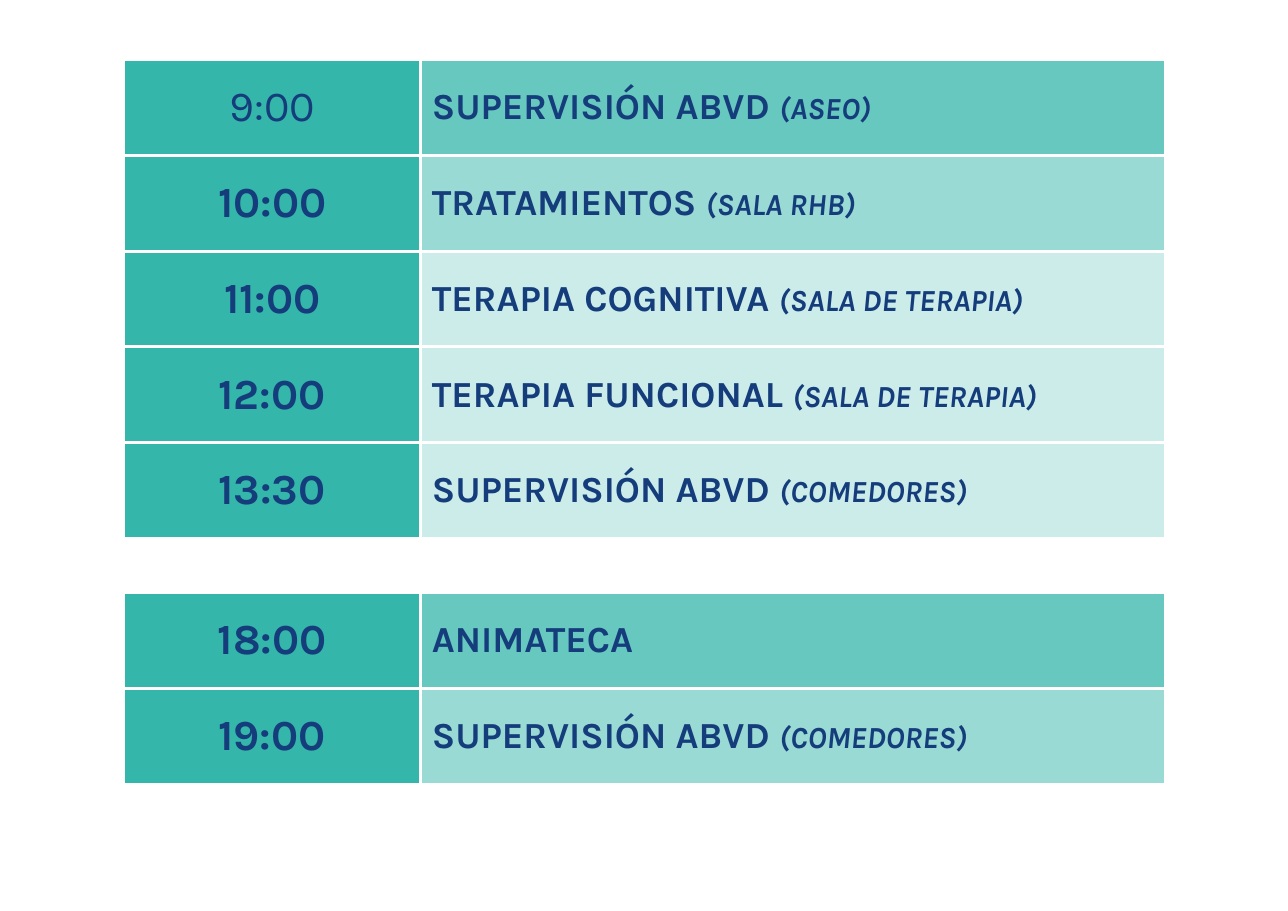
from lxml import etree
from pptx import Presentation, util as u
from pptx.dml.color import RGBColor
from pptx.enum import text
from pptx.oxml import ns

TEAL, NAVY, WHITE = "35B6AA", "153D7C", "FFFFFF"
COLUMN_WIDTHS = (2.7, 6.76)
ROW_HEIGHT, BREAK_HEIGHT = 0.87, 0.49
BORDER_WIDTH = 2.25

HOUR = {"size": u.Pt(28), "bold": True}
FIRST_HOUR = {"size": u.Pt(28), "bold": False}
ACTIVITY = {"size": u.Pt(24), "bold": True}
PLACE = {"size": u.Pt(20), "bold": True, "italic": True}

# Hour, activity, place, opacity of the activity cell; None is the midday break
SCHEDULE = [
    ("9:00", "SUPERVISIÓN ABVD ", "(ASEO)", 75),
    ("10:00", "TRATAMIENTOS ", "(SALA RHB)", 50),
    ("11:00", "TERAPIA COGNITIVA ", "(SALA DE TERAPIA)", 25),
    ("12:00", "TERAPIA FUNCIONAL ", "(SALA DE TERAPIA)", 25),
    ("13:30", "SUPERVISIÓN ABVD ", "(COMEDORES)", 25),
    None,
    ("18:00", "ANIMATECA", "", 75),
    ("19:00", "SUPERVISIÓN ABVD ", "(COMEDORES)", 50),
]


def color(hex_value):
    return RGBColor.from_string(hex_value)


def add_borders(cell):
    properties = cell._tc.get_or_add_tcPr()
    for side in ("a:lnL", "a:lnR", "a:lnT", "a:lnB"):
        border = etree.SubElement(properties, ns.qn(side), w=str(u.Pt(BORDER_WIDTH)))
        fill = etree.SubElement(border, ns.qn("a:solidFill"))
        etree.SubElement(fill, ns.qn("a:srgbClr"), val=WHITE)


def fill_cell(cell, opacity=100):
    cell.fill.solid()
    cell.fill.fore_color.rgb = color(TEAL)
    if opacity < 100:
        tint = cell._tc.tcPr.find(ns.qn("a:solidFill")).find(ns.qn("a:srgbClr"))
        etree.SubElement(tint, ns.qn("a:alpha"), val=str(opacity * 1000))


def write_cell(cell, alignment, *pieces):
    cell.vertical_anchor = text.MSO_ANCHOR.MIDDLE
    paragraph = cell.text_frame.paragraphs[0]
    paragraph.alignment = alignment
    for words, style in pieces:
        if not words:
            continue
        run = paragraph.add_run()
        run.text = words
        run.font.name = "Karla"
        run.font.color.rgb = color(NAVY)
        for attribute, value in style.items():
            setattr(run.font, attribute, value)


def add_schedule(slide, left, top):
    heights = [ROW_HEIGHT if entry else BREAK_HEIGHT for entry in SCHEDULE]
    schedule = slide.shapes.add_table(
        len(SCHEDULE), len(COLUMN_WIDTHS), u.Inches(left), u.Inches(top),
        u.Inches(sum(COLUMN_WIDTHS)), u.Inches(sum(heights))).table
    schedule.first_row = schedule.horz_banding = False
    for column, width in zip(schedule.columns, COLUMN_WIDTHS):
        column.width = u.Inches(width)

    for index, (entry, height) in enumerate(zip(SCHEDULE, heights)):
        row = schedule.rows[index]
        row.height = u.Inches(height)
        for cell in row.cells:
            add_borders(cell)
        hour_cell, activity_cell = row.cells

        # Midday break
        if entry is None:
            for cell in row.cells:
                cell.fill.background()
            continue

        # Hour and its activity
        hour, activity, place, opacity = entry
        fill_cell(hour_cell)
        write_cell(hour_cell, text.PP_ALIGN.CENTER,
                   (hour, HOUR if index else FIRST_HOUR))
        fill_cell(activity_cell, opacity)
        write_cell(activity_cell, text.PP_ALIGN.LEFT,
                   (activity, ACTIVITY), (place, PLACE))


def main():
    deck = Presentation()
    deck.slide_width, deck.slide_height = u.Inches(11.69), u.Inches(8.27)
    slide = deck.slides.add_slide(deck.slide_layouts[6])
    add_schedule(slide, 1.12, 0.54)
    deck.save("out.pptx")


if __name__ == "__main__":
    main()
